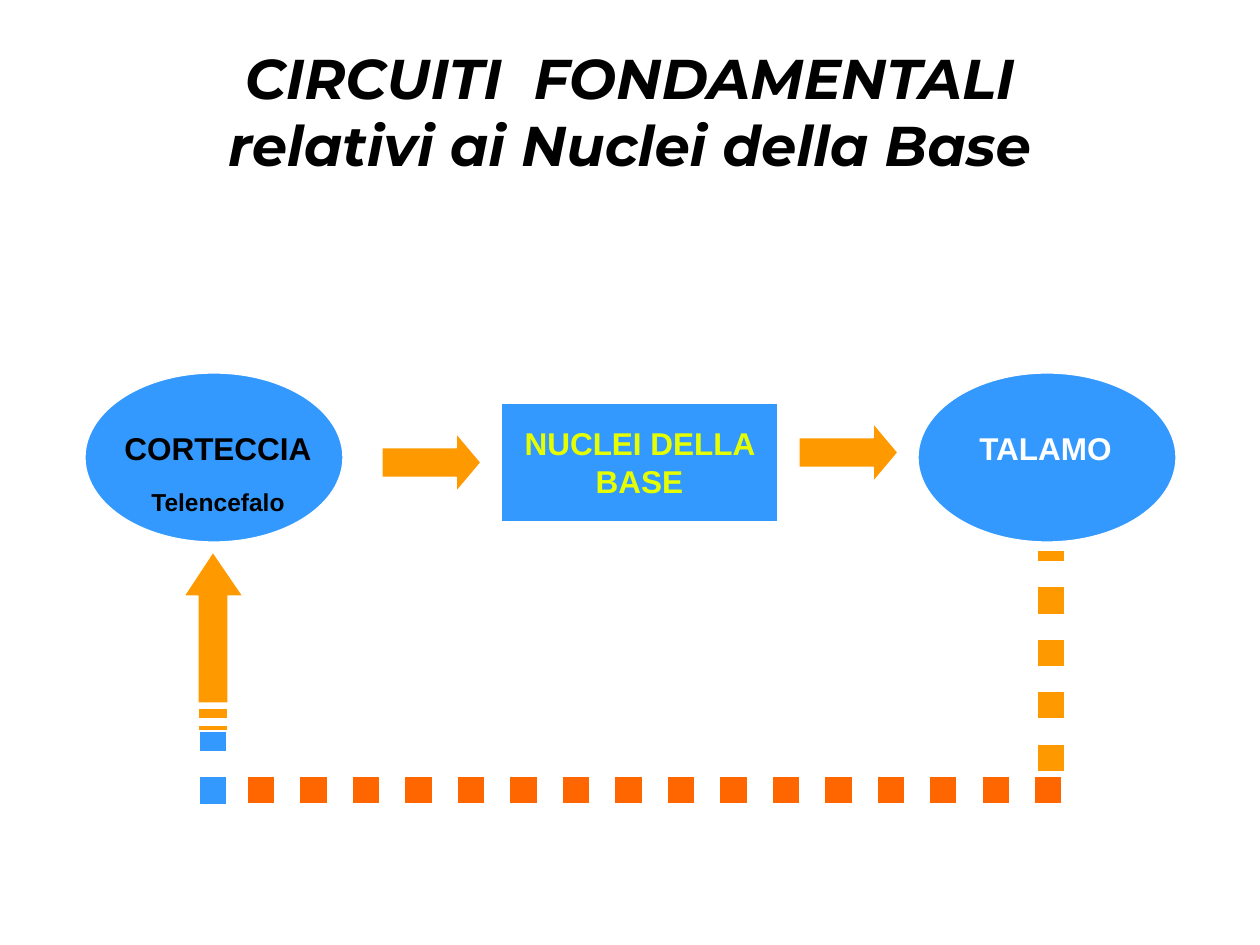
from lxml.etree import SubElement
from pptx import Presentation
from pptx.dml.color import RGBColor
from pptx.enum.dml import MSO_LINE
from pptx.enum.shapes import MSO_CONNECTOR, MSO_SHAPE
from pptx.enum.text import MSO_ANCHOR, PP_ALIGN
from pptx.oxml.ns import qn
from pptx.util import Pt

PX = 914400 / 126
COLORS = {"black": "000000", "white": "FFFFFF", "blue": "3399FF",
          "yellow": "E6FF00", "orange": "FF9900", "red_orange": "FF6600"}


def emu(px):
    return round(px * PX)


def color(name):
    return RGBColor.from_string(COLORS[name])


class Diagram:
    def __init__(self, slide, font="Arial"):
        self.shapes = slide.shapes
        self.font = font

    def paint(self, shape, fill):
        shape.shadow.inherit = False
        shape.fill.solid()
        shape.fill.fore_color.rgb = color(fill)
        shape.line.color.rgb = color("white")
        shape.line.width = Pt(0.75)

    def block(self, kind, box, fill):
        shape = self.shapes.add_shape(kind, *map(emu, box))
        self.paint(shape, fill)
        return shape

    def arrow(self, box):
        arrow = self.block(MSO_SHAPE.RIGHT_ARROW, box, "orange")
        arrow.adjustments[1] = 0.42

    def outline(self, contours, fill):
        first, *others = contours
        builder = self.shapes.build_freeform(*first[0], scale=PX)
        builder.add_line_segments(first[1:])
        for contour in others:
            builder.move_to(*contour[0])
            builder.add_line_segments(contour[1:])
        self.paint(builder.convert_to_shape(), fill)

    def dotted_line(self, start, end, stroke):
        line = self.shapes.add_connector(
            MSO_CONNECTOR.STRAIGHT, *map(emu, start + end))
        line.line.color.rgb = color(stroke)
        line.line.width = Pt(15)
        line.line.dash_style = MSO_LINE.ROUND_DOT
        SubElement(line._element.spPr, qn("a:effectLst"))

    def text(self, box, lines, ink, align=PP_ALIGN.CENTER, before=11.2,
             font=None, italic=False, anchor=MSO_ANCHOR.TOP):
        frame = self.shapes.add_textbox(*map(emu, box)).text_frame
        frame.word_wrap = True
        frame.vertical_anchor = anchor
        for index, (words, size) in enumerate(lines):
            paragraph = frame.add_paragraph() if index else frame.paragraphs[0]
            paragraph.text = words
            paragraph.alignment = align
            paragraph.space_before = Pt(before)
            for run in paragraph.runs:
                run.font.name = font or self.font
                run.font.size = Pt(size)
                run.font.bold = True
                run.font.italic = italic
                run.font.color.rgb = color(ink)


def band(left, top, right, bottom):
    return [(left, top), (right, top), (right, bottom), (left, bottom)]


def main():
    presentation = Presentation()
    presentation.slide_width = emu(1260)
    presentation.slide_height = emu(945)
    slide = presentation.slides.add_slide(presentation.slide_layouts[6])
    diagram = Diagram(slide)

    # Title
    diagram.text((63, 32, 1134, 157),
                 [("CIRCUITI  FONDAMENTALI\nrelativi ai Nuclei della Base", 32)],
                 "black", before=0, font="Montserrat", italic=True,
                 anchor=MSO_ANCHOR.MIDDLE)

    # Brain regions
    for left in (85, 918):
        diagram.block(MSO_SHAPE.OVAL, (left, 373, 258, 169), "blue")
    diagram.block(MSO_SHAPE.RECTANGLE, (501, 403, 277, 119), "blue")

    # Region names
    diagram.text((94, 423, 248, 99), [("CORTECCIA", 18), ("Telencefalo", 14)],
                 "black")
    diagram.text((967, 423, 175, 50), [("TALAMO", 18)], "white",
                 align=PP_ALIGN.LEFT)
    diagram.text((501, 418, 277, 88), [("NUCLEI DELLA BASE", 18)], "yellow")

    # Forward path
    for left, top in ((799, 423), (382, 433)):
        diagram.arrow((left, top, 99, 59))

    # Return path to the cortex
    diagram.dotted_line((213, 725), (213, 814), "blue")
    diagram.dotted_line((248, 790), (1072, 790), "red_orange")
    diagram.dotted_line((1051, 771), (1051, 551), "orange")

    # Striped arrow into the cortex
    head_left, left, tip, right, head_right = 184, 198, 213, 228, 243
    top, neck, tail = 552, 596, 703
    arrow = [(tip, top), (head_right, neck), (right, neck), (right, tail),
             (left, tail), (left, neck), (head_left, neck)]
    stripes = [band(left, 708, right, 719), band(left, 725, right, 731)]
    contours = [contour + contour[:1] for contour in [arrow, *stripes]]
    diagram.outline(contours, "orange")

    presentation.save("out.pptx")


if __name__ == "__main__":
    main()
